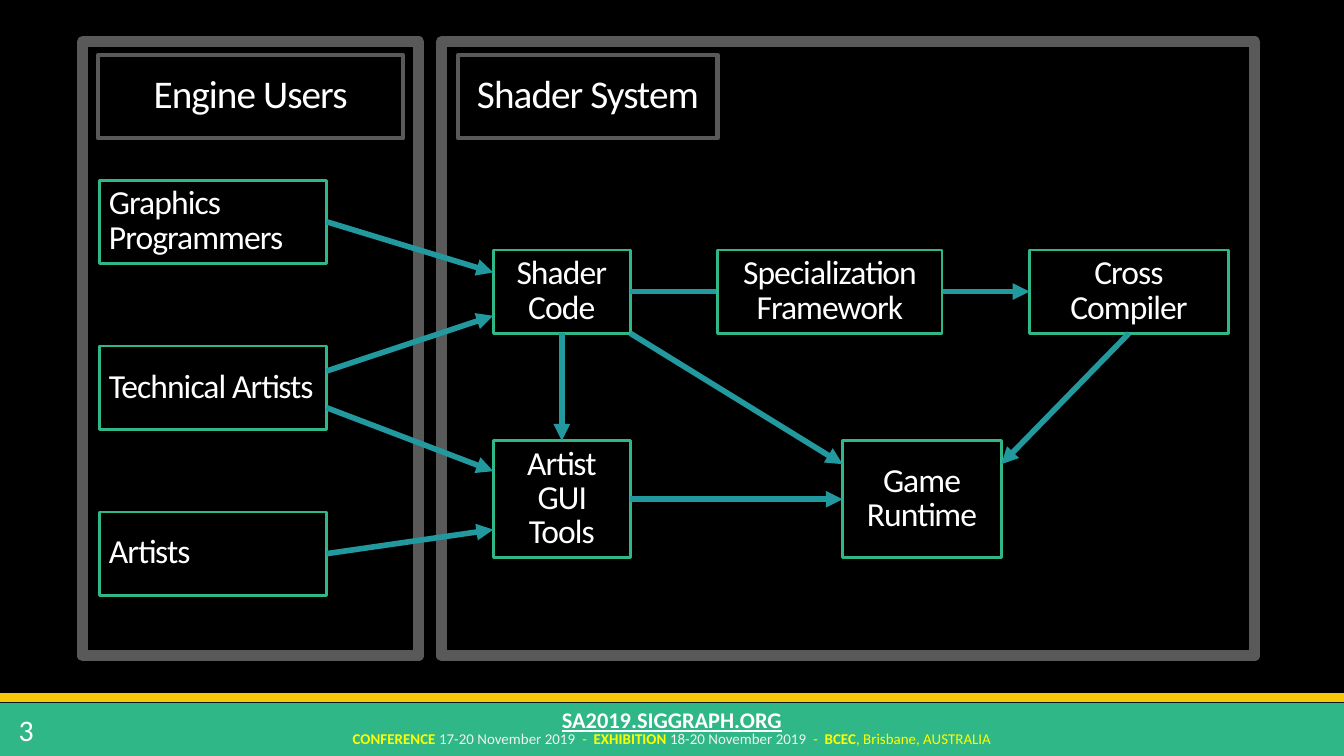
from dataclasses import dataclass

import pptx
import pptx.dml.color
import pptx.enum.shapes
import pptx.enum.text
import pptx.oxml.ns
import pptx.util
from lxml import etree

ALIGN = pptx.enum.text.PP_ALIGN
ANCHOR = pptx.enum.text.MSO_ANCHOR
COLUMNS, ROWS = 100, 56.25
CELL = pptx.util.Inches(0.1)


@dataclass(frozen=True)
class Theme:
    font: str = "Calibri"
    background: str = "000000"
    text: str = "FFFFFF"
    dates: str = "F2F2F2"
    highlight: str = "FFFF00"
    green: str = "30B787"
    gold: str = "F7C80A"
    gray: str = "595959"
    teal: str = "21999F"
    heading_size: float = 21
    node_size: float = 18
    number_size: float = 16
    address_size: float = 12
    event_size: float = 8
    frame_width: float = 6
    gold_width: float = 5
    arrow_width: float = 3
    heading_width: float = 2.25
    node_width: float = 1.5


THEME = Theme()


@dataclass(frozen=True)
class Box:
    """A rectangle in grid columns and rows."""
    left: float
    top: float
    width: float
    height: float
    lines: tuple[str, ...] = ()
    align: ALIGN = ALIGN.CENTER

    def point(self, across: float, down: float) -> tuple[float, float]:
        return self.left + across * self.width, self.top + down * self.height


@dataclass(frozen=True)
class Arrow:
    """Ends are shares of the width and height of the two boxes."""
    source: Box
    start: tuple[float, float]
    target: Box
    end: tuple[float, float]


def grid(*values: float) -> list[int]:
    return [round(value * CELL) for value in values]


def color(value: str) -> pptx.dml.color.RGBColor:
    return pptx.dml.color.RGBColor.from_string(value)


def style_paragraph(paragraph, size: float, align: ALIGN = ALIGN.CENTER) -> None:
    paragraph.alignment = align
    paragraph.font.name = THEME.font
    paragraph.font.size = pptx.util.Pt(size)
    paragraph.font.color.rgb = color(THEME.text)


def draw_box(slide, box: Box, line: str | None, width: float = 0,
             fill: str | None = None, size: float = THEME.node_size) -> None:
    shape = slide.shapes.add_shape(
        pptx.enum.shapes.MSO_SHAPE.RECTANGLE,
        *grid(box.left, box.top, box.width, box.height))
    shape.shadow.inherit = False
    if fill:
        shape.fill.solid()
        shape.fill.fore_color.rgb = color(fill)
    else:
        shape.fill.background()
    if line:
        shape.line.color.rgb = color(line)
        shape.line.width = pptx.util.Pt(width)
    else:
        shape.line.fill.background()

    frame = shape.text_frame
    frame.word_wrap = True
    frame.vertical_anchor = ANCHOR.MIDDLE
    frame.margin_left = frame.margin_right = pptx.util.Inches(0.07)
    frame.margin_top = frame.margin_bottom = pptx.util.Inches(0.04)
    for index, text in enumerate(box.lines):
        paragraph = frame.add_paragraph() if index else frame.paragraphs[0]
        run = paragraph.add_run()
        run.text = text
        run._r.get_or_add_rPr().set("spc", "-50")
        paragraph.line_spacing = 0.85
        style_paragraph(paragraph, size, box.align)


def draw_line(slide, start: tuple[float, float], end: tuple[float, float],
              line: str, width: float, arrowhead: bool = False) -> None:
    connector = slide.shapes.add_connector(
        pptx.enum.shapes.MSO_CONNECTOR.STRAIGHT, *grid(*start, *end))
    connector.line.color.rgb = color(line)
    connector.line.width = pptx.util.Pt(width)
    if arrowhead:
        etree.SubElement(connector.line._get_or_add_ln(),
                         pptx.oxml.ns.qn("a:tailEnd"), type="triangle")
    etree.SubElement(connector._element.spPr, pptx.oxml.ns.qn("a:effectLst"))


def add_text(slide, box: Box, size: float, wrap: bool = True):
    """Add a text box and return its styled paragraph and its frame."""
    frame = slide.shapes.add_textbox(
        *grid(box.left, box.top, box.width, box.height)).text_frame
    frame.word_wrap = wrap
    paragraph = frame.paragraphs[0]
    for text in box.lines:
        paragraph.add_run().text = text
    style_paragraph(paragraph, size, box.align)
    return paragraph, frame


def draw_footer(slide) -> None:
    draw_box(slide, Box(0, 52.3, COLUMNS, ROWS - 52.3), None, fill=THEME.green)
    event, _ = add_text(slide, Box(2.8, 53.8, 94.4, 2.4), THEME.event_size)
    for text, run_color, bold in (
            ("CONFERENCE ", THEME.highlight, True),
            ("17-20 November 2019", THEME.dates, False),
            ("  -  ", THEME.highlight, False),
            ("EXHIBITION ", THEME.highlight, True),
            ("18-20 November 2019  ", THEME.dates, False),
            ("-  ", THEME.highlight, False),
            ("BCEC", THEME.highlight, True),
            (", Brisbane, AUSTRALIA", THEME.highlight, False)):
        run = event.add_run()
        run.text = text
        run.font.color.rgb = color(run_color)
        run.font.bold = bold
    address, _ = add_text(slide, Box(2.85, 52.05, 94.3, 3, ("SA2019.SIGGRAPH.ORG",)),
                          THEME.address_size)
    address.font.bold = True
    address.font.underline = True
    draw_line(slide, (-0.1, 51.9), (COLUMNS, 51.9), THEME.gold, THEME.gold_width)
    _, number = add_text(slide, Box(0.4, 52.3, 3.2, 3.9, ("3",), ALIGN.LEFT),
                         THEME.number_size, wrap=False)
    number.vertical_anchor = ANCHOR.MIDDLE


def draw_diagram(slide) -> None:
    panels = Box(6.15, 3.1, 25, 45.7), Box(32.85, 3.1, 60.5, 45.7)
    headings = (Box(7.3, 4.1, 22.7, 6.2, ("Engine Users",)),
                Box(34.1, 4.1, 19.3, 6.2, ("Shader System",)))
    programmers, technical, artists = users = [
        Box(7.4, 13.4 + 12.35 * row, 16.9, 6.2, (name,), ALIGN.LEFT)
        for row, name in enumerate(
            ("Graphics Programmers", "Technical Artists", "Artists"))]
    code = Box(36.7, 18.6, 10.2, 6.2, ("Shader", "Code"))
    framework = Box(53.4, 18.6, 16.7, 6.2, ("Specialization", "Framework"))
    compiler = Box(76.6, 18.6, 14.8, 6.2, ("Cross", "Compiler"))
    tools = Box(36.7, 32.8, 10.2, 8.7, ("Artist", "GUI Tools"))
    runtime = Box(62.7, 32.8, 11.8, 8.7, ("Game", "Runtime"))
    arrows = (
        Arrow(programmers, (1, 0.5), code, (0, 0.27)),
        Arrow(technical, (1, 0.3), code, (0, 0.79)),
        Arrow(technical, (1, 0.74), tools, (0, 0.26)),
        Arrow(artists, (1, 0.5), tools, (0, 0.76)),
        Arrow(code, (1, 0.5), compiler, (0, 0.5)),
        Arrow(code, (0.5, 1), tools, (0.5, 0)),
        Arrow(code, (1, 1), runtime, (0, 0.2)),
        Arrow(tools, (1, 0.5), runtime, (0, 0.5)),
        Arrow(compiler, (0.5, 1), runtime, (1, 0.2)),
    )
    for panel in panels:
        draw_box(slide, panel, THEME.gray, THEME.frame_width)
    for heading in headings:
        draw_box(slide, heading, THEME.gray, THEME.heading_width,
                 size=THEME.heading_size)
    for node in (*users, code, compiler, tools, runtime):
        draw_box(slide, node, THEME.green, THEME.node_width)
    for arrow in arrows:
        draw_line(slide, arrow.source.point(*arrow.start),
                  arrow.target.point(*arrow.end),
                  THEME.teal, THEME.arrow_width, arrowhead=True)
    draw_box(slide, framework, THEME.green, THEME.node_width, THEME.background)


def main() -> None:
    presentation = pptx.Presentation()
    presentation.slide_width, presentation.slide_height = grid(COLUMNS, ROWS)
    slide = presentation.slides.add_slide(presentation.slide_layouts[6])
    slide.background.fill.solid()
    slide.background.fill.fore_color.rgb = color(THEME.background)
    draw_footer(slide)
    draw_diagram(slide)
    presentation.save("out.pptx")


if __name__ == "__main__":
    main()
